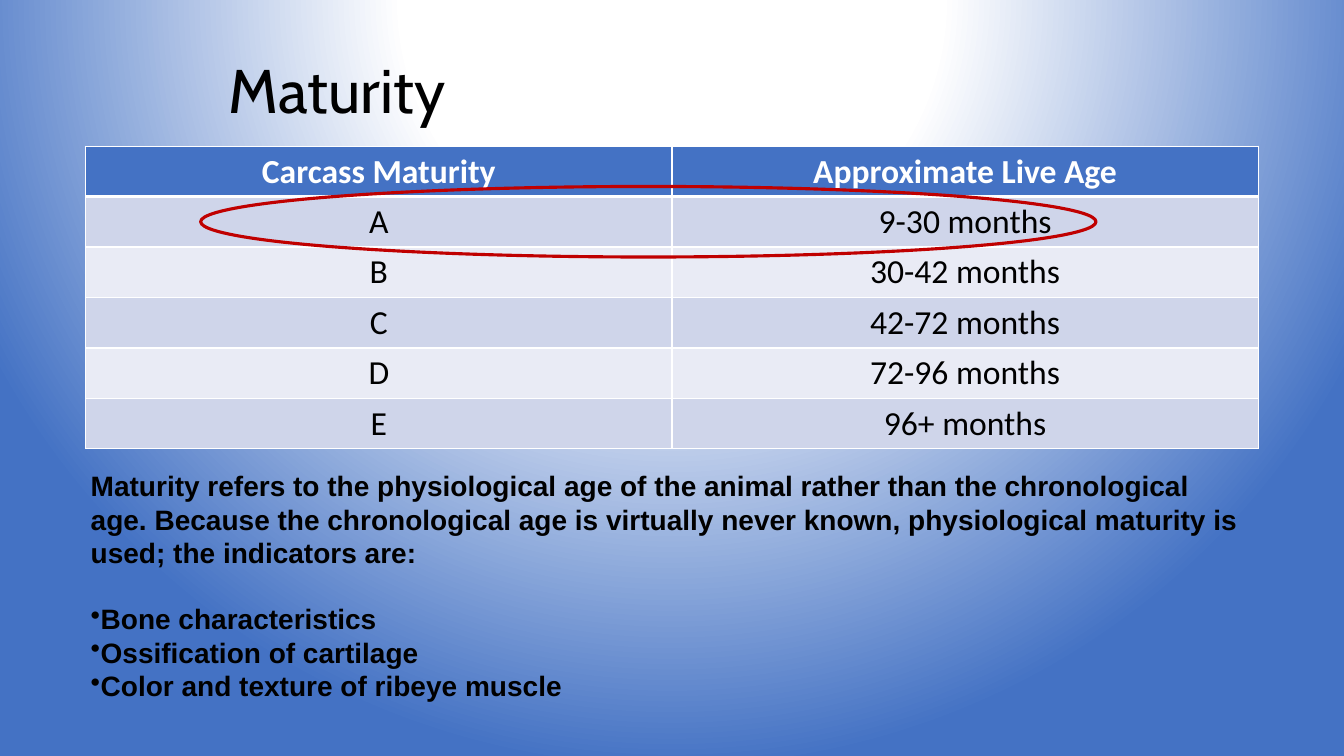
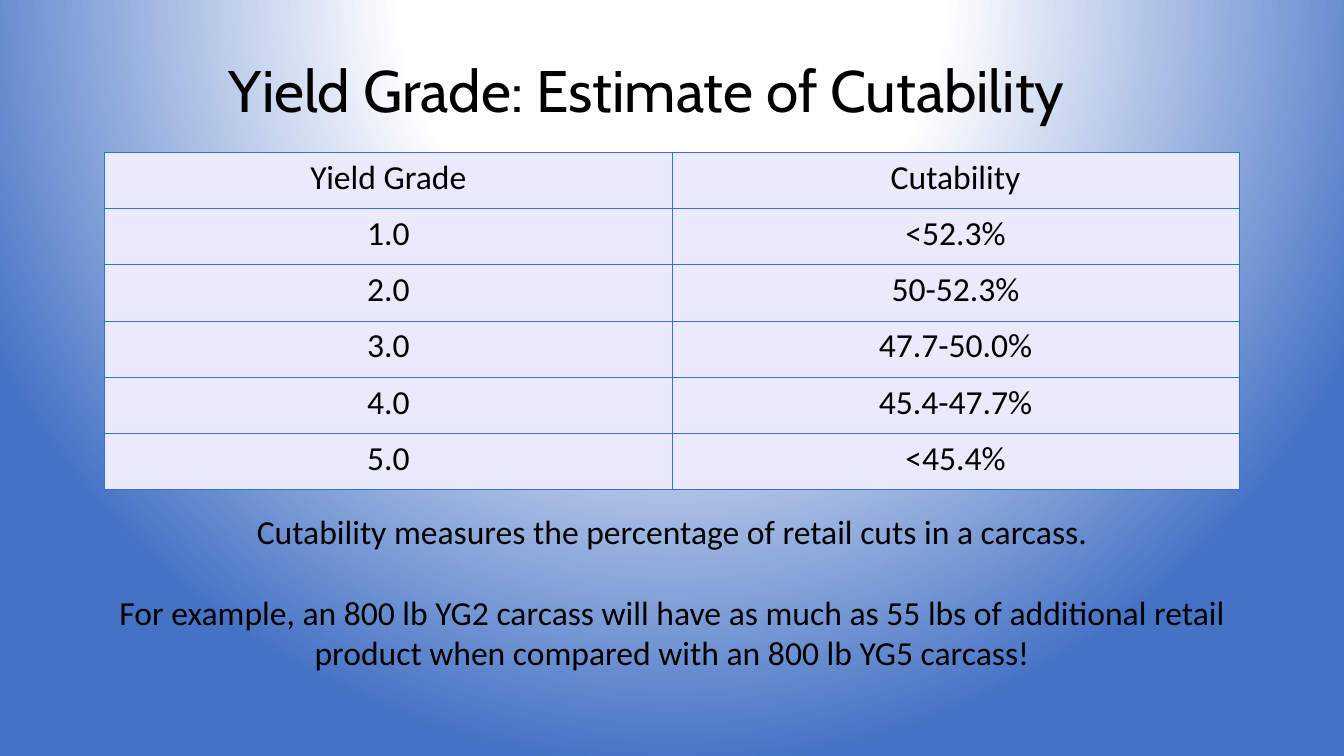
from dataclasses import dataclass

from pptx import Presentation
from pptx.dml.color import RGBColor
from pptx.enum.shapes import MSO_SHAPE as Shape
from pptx.enum.text import MSO_ANCHOR as Anchor, MSO_AUTO_SIZE as Fit, PP_ALIGN as Align
from pptx.oxml import parse_xml
from pptx.oxml.ns import nsdecls
from pptx.util import Inches, Pt

BLUE, WHITE, BLACK, RED = "4472C4", "FFFFFF", "000000", "C00000"
BAND, PALE, MIST, EDGE = "CFD5EA", "E9EBF5", "E9EBFC", "376ED1"


@dataclass
class Box:
    """Place and size in inches."""
    left: float
    top: float
    width: float
    height: float

    def emu(self) -> tuple:
        """Return the four lengths."""
        return tuple(Inches(n) for n in (self.left, self.top, self.width, self.height))


@dataclass
class Line:
    """One paragraph of body text."""
    text: str
    gap: float = 0
    bullet: bool = False


@dataclass
class Look:
    """Colours and rules of a table."""
    fills: tuple
    head: str
    ink: str
    edge: str
    width: float
    rule: float
    bold: bool


BANDED = Look((BAND, PALE), BLUE, WHITE, WHITE, 1, 3, True)
PLAIN = Look((MIST,), MIST, BLACK, EDGE, 0.75, 0.75, False)

AGES = [("Carcass Maturity", "Approximate Live Age"), ("A", "9-30 months"),
        ("B", "30-42 months"), ("C", "42-72 months"),
        ("D", "72-96 months"), ("E", "96+ months")]
YIELDS = [("Yield Grade", "Cutability"), ("1.0", "<52.3%"), ("2.0", "50-52.3%"),
          ("3.0", "47.7-50.0%"), ("4.0", "45.4-47.7%"), ("5.0", "<45.4%")]
SIGNS = [
    Line("Maturity refers to the physiological age of the animal rather than the "
         "chronological age. Because the chronological age is virtually never known, "
         "physiological maturity is used; the indicators are:"),
    Line("Bone characteristics", 23, True),
    Line("Ossification of cartilage", 0, True),
    Line("Color and texture of ribeye muscle", 0, True)]
NOTES = [
    Line("Cutability measures the percentage of retail cuts in a carcass."),
    Line("For example, an 800 lb YG2 carcass will have as much as 55 lbs of additional "
         "retail product when compared with an 800 lb YG5 carcass!", 29)]


def color(code: str) -> RGBColor:
    """Turn a hex string into a colour."""
    return RGBColor.from_string(code)


def style(para, face: str, size: float, ink: str = BLACK, bold: bool = False) -> None:
    """Format the runs of a paragraph."""
    for run in para.runs:
        font = run.font
        font.name, font.size, font.bold = face, Pt(size), bold
        font.color.rgb = color(ink)


def backdrop(deck) -> None:
    """Give the master its round gradient."""
    stops = "".join(f'<a:gs pos="{pos}"><a:srgbClr val="{code}"/></a:gs>'
                    for pos, code in ((0, WHITE), (35000, WHITE), (100000, BLUE)))
    master = deck.slide_master
    master.background.fill.solid()
    old = master.element.xpath(".//p:bgPr/a:solidFill")[0]
    old.getparent().replace(old, parse_xml(
        f'<a:gradFill {nsdecls("a")} rotWithShape="1"><a:gsLst>{stops}</a:gsLst>'
        '<a:path path="circle"><a:fillToRect l="50000" t="-80000" r="50000" b="180000"/>'
        '</a:path></a:gradFill>'))


def start(deck, text: str, size: float):
    """Add a slide with its title."""
    slide = deck.slides.add_slide(deck.slide_layouts[5])
    title = slide.shapes.title
    title.left, title.top, title.width, title.height = Box(2.17, 0.3, 9, 1.25).emu()
    frame = title.text_frame
    frame.text = text
    frame.auto_size, frame.vertical_anchor = Fit.NONE, Anchor.MIDDLE
    para = frame.paragraphs[0]
    para.alignment, para.line_spacing = Align.LEFT, 0.9
    style(para, "Cabin", size)
    return slide


def border(cell, look: Look, row: int) -> None:
    """Draw the four edges of a cell."""
    wide = {"T": look.rule if row == 1 else look.width,
            "B": look.rule if row == 0 else look.width}
    props = cell._tc.get_or_add_tcPr()
    for side in "LRTB":
        size = int(Pt(wide.get(side, look.width)))
        props.append(parse_xml(
            f'<a:ln{side} {nsdecls("a")} w="{size}"><a:solidFill>'
            f'<a:srgbClr val="{look.edge}"/></a:solidFill></a:ln{side}>'))


def grid(slide, rows: list, box: Box, look: Look) -> None:
    """Add a table with equal rows and columns."""
    table = slide.shapes.add_table(len(rows), len(rows[0]), *box.emu()).table
    for r, texts in enumerate(rows):
        table.rows[r].height = Inches(box.height / len(rows))
        for c, text in enumerate(texts):
            cell = table.cell(r, c)
            border(cell, look, r)
            cell.fill.solid()
            fill = look.fills[(r - 1) % len(look.fills)] if r else look.head
            cell.fill.fore_color.rgb = color(fill)
            cell.text_frame.text = text
            para = cell.text_frame.paragraphs[0]
            para.alignment = Align.CENTER
            style(para, "Calibri", 24, BLACK if r else look.ink, look.bold and r == 0)


def body(slide, lines: list, box: Box, face: str, size: float,
         align: Align, bold: bool = False, inset: float = 0.1) -> None:
    """Add a text box of paragraphs."""
    frame = slide.shapes.add_textbox(*box.emu()).text_frame
    frame.word_wrap = True
    frame.margin_left = frame.margin_right = Inches(inset)
    for i, line in enumerate(lines):
        para = frame.add_paragraph() if i else frame.paragraphs[0]
        para.text, para.alignment = line.text, align
        if line.gap:
            para.space_before = Pt(line.gap)
        if line.bullet:
            para._p.get_or_add_pPr().append(
                parse_xml(f'<a:buChar {nsdecls("a")} char="•"/>'))
        style(para, face, size, BLACK, bold)


def ring(slide, box: Box) -> None:
    """Circle a table row in red."""
    oval = slide.shapes.add_shape(Shape.OVAL, *box.emu())
    oval.shadow.inherit = False
    oval.fill.background()
    oval.line.color.rgb, oval.line.width = color(RED), Pt(2.25)


def main() -> None:
    """Build and save the deck."""
    deck = Presentation()
    deck.slide_width, deck.slide_height = Inches(13.33), Inches(7.5)
    backdrop(deck)

    slide = start(deck, "Maturity", 44)
    body(slide, SIGNS, Box(0.85, 4.6, 11.63, 2.46), "Arial", 20, Align.LEFT, True, 0.05)
    grid(slide, AGES, Box(0.85, 1.45, 11.63, 3), BANDED)
    ring(slide, Box(1.99, 1.85, 8.88, 0.7))

    slide = start(deck, "Yield Grade: Estimate of Cutability", 41.8)
    grid(slide, YIELDS, Box(1.04, 1.51, 11.25, 3.35), PLAIN)
    body(slide, NOTES, Box(1.04, 5.02, 11.25, 1.72), "Calibri", 24, Align.CENTER)

    deck.save("out.pptx")


if __name__ == "__main__":
    main()
